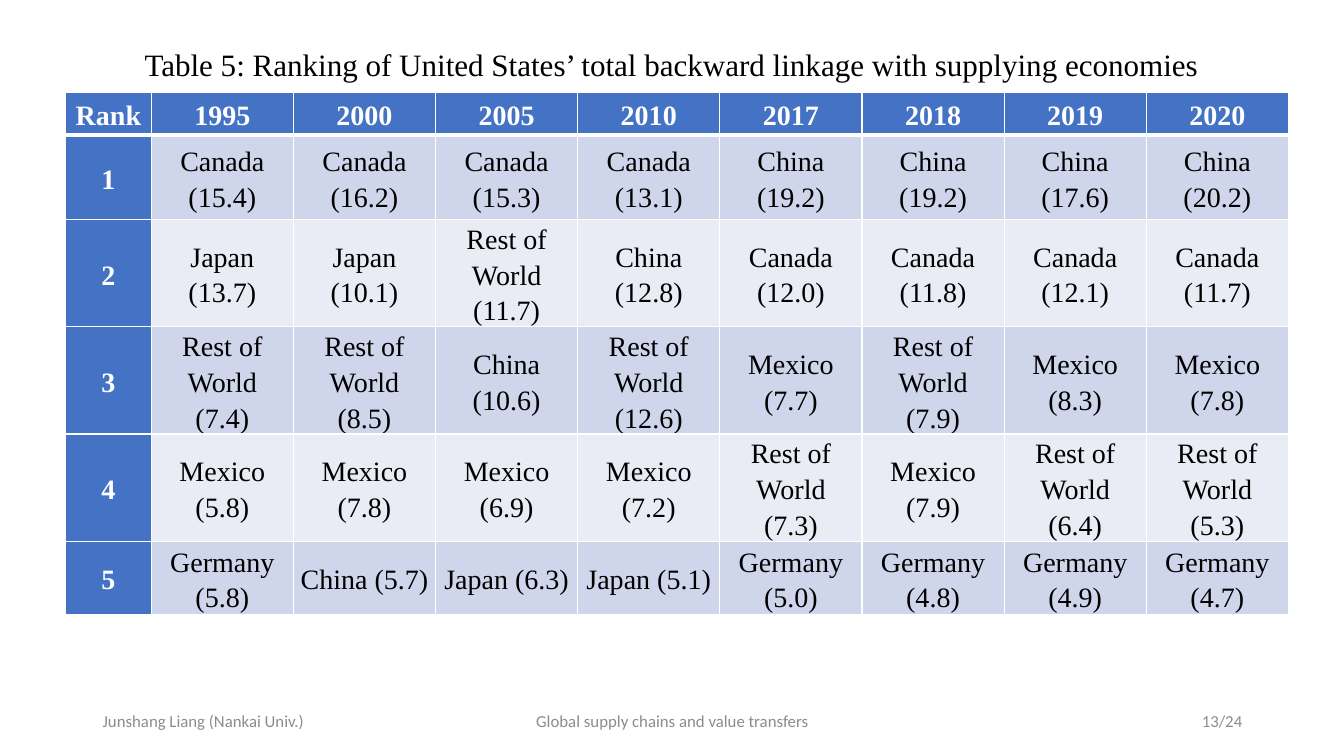
from lxml import etree
from pptx import Presentation
from pptx.dml.color import RGBColor
from pptx.enum.text import MSO_ANCHOR, MSO_AUTO_SIZE, PP_ALIGN
from pptx.oxml.ns import qn
from pptx.util import Inches, Pt

LEFT, CENTER, RIGHT = PP_ALIGN.LEFT, PP_ALIGN.CENTER, PP_ALIGN.RIGHT
TOP, MIDDLE = MSO_ANCHOR.TOP, MSO_ANCHOR.MIDDLE
NO_AUTOFIT = MSO_AUTO_SIZE.NONE
TITLE_ONLY_LAYOUT = 5

SERIF, SANS = "Times New Roman", "Calibri"
COLORS = {
    "header": "4472C4",
    "odd_row": "CFD5EA",
    "even_row": "E9EBF5",
    "white": "FFFFFF",
    "black": "000000",
    "footer": "8C8C8C",
}

TITLE = "Table 5: Ranking of United States’ total backward linkage with supplying economies"
YEARS = ["1995", "2000", "2005", "2010", "2017", "2018", "2019", "2020"]
RANKING = [
    [("Canada", 15.4), ("Canada", 16.2), ("Canada", 15.3), ("Canada", 13.1),
     ("China", 19.2), ("China", 19.2), ("China", 17.6), ("China", 20.2)],
    [("Japan", 13.7), ("Japan", 10.1), ("Rest of World", 11.7), ("China", 12.8),
     ("Canada", 12.0), ("Canada", 11.8), ("Canada", 12.1), ("Canada", 11.7)],
    [("Rest of World", 7.4), ("Rest of World", 8.5), ("China", 10.6), ("Rest of World", 12.6),
     ("Mexico", 7.7), ("Rest of World", 7.9), ("Mexico", 8.3), ("Mexico", 7.8)],
    [("Mexico", 5.8), ("Mexico", 7.8), ("Mexico", 6.9), ("Mexico", 7.2),
     ("Rest of World", 7.3), ("Mexico", 7.9), ("Rest of World", 6.4), ("Rest of World", 5.3)],
    [("Germany", 5.8), ("China", 5.7), ("Japan", 6.3), ("Japan", 5.1),
     ("Germany", 5.0), ("Germany", 4.8), ("Germany", 4.9), ("Germany", 4.7)],
]
RANK_WIDTH, YEAR_WIDTH = 0.85, 1.41
ROW_HEIGHTS = [0.42, 0.84, 0.78, 0.79, 0.8, 0.73]
FOOTERS = [
    ("Junshang Liang (Nankai Univ.)", 0.92, 3, LEFT),
    ("Global supply chains and value transfers", 4.42, 4.5, CENTER),
    ("13/24", 9.42, 3, RIGHT),
]


def add_run(paragraph, text, font, size, color, bold=False):
    """Add one formatted run to a paragraph."""
    run = paragraph.add_run()
    run.text = text
    run.font.name = font
    run.font.size = Pt(size)
    run.font.bold = bold
    run.font.color.rgb = RGBColor.from_string(COLORS[color])


def add_title(slide):
    """Place the table caption in the title placeholder."""
    title = slide.shapes.title
    title.left, title.top = Inches(1.3), Inches(0.44)
    title.width, title.height = Inches(10.73), Inches(0.47)
    frame = title.text_frame
    frame.word_wrap = True
    frame.auto_size = NO_AUTOFIT
    frame.vertical_anchor = TOP
    paragraph = frame.paragraphs[0]
    paragraph.alignment = CENTER
    paragraph.line_spacing = 0.9
    paragraph.space_before = Pt(10)
    add_run(paragraph, TITLE, SERIF, 22.2, "black")


def add_footer(slide, text, left, width, alignment):
    """Add one grey footer text."""
    box = slide.shapes.add_textbox(Inches(left), Inches(6.95), Inches(width), Inches(0.4))
    frame = box.text_frame
    frame.word_wrap = True
    frame.vertical_anchor = MIDDLE
    paragraph = frame.paragraphs[0]
    paragraph.alignment = alignment
    add_run(paragraph, text, SANS, 12, "footer")


def set_borders(cell, top, bottom):
    """Draw white borders around a cell, with widths in points."""
    properties = cell._tc.get_or_add_tcPr()
    for side, width in (("L", 1), ("R", 1), ("T", top), ("B", bottom)):
        line = etree.SubElement(properties, qn(f"a:ln{side}"), w=str(Pt(width)))
        fill = etree.SubElement(line, qn("a:solidFill"))
        etree.SubElement(fill, qn("a:srgbClr"), val=COLORS["white"])


def fill_cell(cell, text, row, column):
    """Write and format one table cell according to its place."""
    heading = row == 0 or column == 0
    set_borders(cell, 3 if row == 1 else 1, 3 if row == 0 else 1)
    band = "odd_row" if row % 2 else "even_row"
    cell.fill.solid()
    cell.fill.fore_color.rgb = RGBColor.from_string(COLORS["header" if heading else band])
    cell.vertical_anchor = MIDDLE
    cell.margin_left = cell.margin_right = Inches(0.06 if heading else 0.07)
    cell.margin_top = cell.margin_bottom = 0
    paragraph = cell.text_frame.paragraphs[0]
    paragraph.alignment = CENTER
    paragraph.line_spacing = 1.15
    paragraph.space_after = Pt(8)
    add_run(paragraph, text, SERIF, 20, "white" if heading else "black", heading)


def add_ranking_table(slide):
    """Add the table of supplying economies by rank and year."""
    rows = [["Rank"] + YEARS]
    for rank, entries in enumerate(RANKING, start=1):
        rows.append([str(rank)] + [f"{economy} ({share:.1f})" for economy, share in entries])
    widths = [RANK_WIDTH] + [YEAR_WIDTH] * len(YEARS)
    table = slide.shapes.add_table(
        len(rows), len(widths), Inches(0.65), Inches(0.92),
        Inches(sum(widths)), Inches(sum(ROW_HEIGHTS)),
    ).table
    table.first_col = True
    for column, width in zip(table.columns, widths):
        column.width = Inches(width)
    for row, height in zip(table.rows, ROW_HEIGHTS):
        row.height = Inches(height)
    for row, texts in enumerate(rows):
        for column, text in enumerate(texts):
            fill_cell(table.cell(row, column), text, row, column)


def main():
    """Build and save the slide."""
    presentation = Presentation()
    presentation.slide_width, presentation.slide_height = Inches(13.33), Inches(7.5)
    slide = presentation.slides.add_slide(presentation.slide_layouts[TITLE_ONLY_LAYOUT])
    add_ranking_table(slide)
    for footer in FOOTERS:
        add_footer(slide, *footer)
    add_title(slide)
    presentation.save("out.pptx")


if __name__ == "__main__":
    main()
